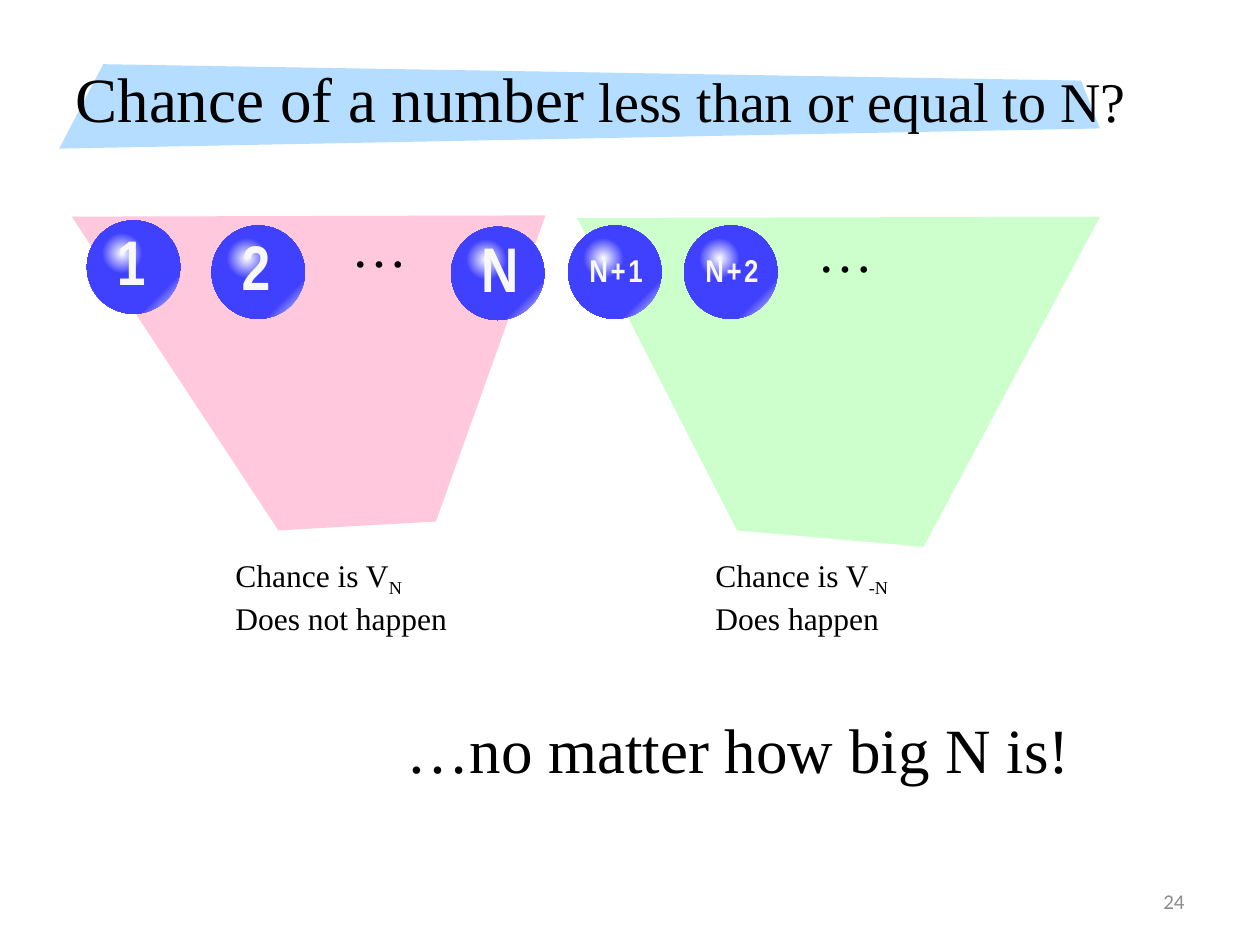
from pptx import Presentation
from pptx.dml.color import RGBColor
from pptx.enum.shapes import MSO_SHAPE
from pptx.enum.text import MSO_ANCHOR, MSO_AUTO_SIZE, PP_ALIGN
from pptx.oxml import parse_xml
from pptx.oxml.ns import nsdecls, qn
from pptx.util import Inches, Pt

SERIF = "Times New Roman"
BALL_BLUE, WHITE = "4040FF", "FFFFFF"
BALL_SIZE, GLINT_SIZE = 0.74, 0.36


def color(hex_string):
    return RGBColor.from_string(hex_string)


def add_run(paragraph, text, size=18, font=SERIF, fill="000000", bold=False,
            spacing=None, baseline=None):
    run = paragraph.add_run()
    run.text = text
    run.font.size, run.font.name, run.font.bold = Pt(size), font, bold
    run.font.color.rgb = color(fill)
    properties = run.font._element
    if spacing is not None:
        properties.set("spc", str(int(spacing * 100)))
    if baseline is not None:
        properties.set("baseline", str(baseline * 1000))


def add_text(shapes, box, lines, wrap=False, anchor=MSO_ANCHOR.TOP,
             align=PP_ALIGN.LEFT, **style):
    """Add a text box; each line is a list of (text, extra format) runs."""
    frame = shapes.add_textbox(*map(Inches, box)).text_frame
    frame.word_wrap, frame.vertical_anchor = wrap, anchor
    frame.auto_size = MSO_AUTO_SIZE.SHAPE_TO_FIT_TEXT
    if isinstance(lines, str):
        lines = [[(lines, {})]]
    for index, runs in enumerate(lines):
        paragraph = frame.add_paragraph() if index else frame.paragraphs[0]
        paragraph.alignment = align
        for text, extra in runs:
            add_run(paragraph, text, **{**style, **extra})


def add_polygon(shapes, left, top, corners, fill):
    points = [(Inches(left + x), Inches(top + y)) for x, y in corners]
    builder = shapes.build_freeform(*points[0], scale=1.0)
    builder.add_line_segments(points[1:], close=True)
    polygon = builder.convert_to_shape()
    polygon.shadow.inherit = False
    polygon.fill.solid()
    polygon.fill.fore_color.rgb = color(fill)
    polygon.line.fill.background()
    return polygon


def add_radial_circle(shapes, left, top, size, stops, focus):
    """Add a circle shaded outward from a focus given as l, t, r, b percent."""
    circle = shapes.add_shape(
        MSO_SHAPE.OVAL, *map(Inches, (left, top, size, size)))
    circle.shadow.inherit = False
    circle.line.fill.background()
    circle.fill.background()
    stop_xml = "".join(
        f'<a:gs pos="{position * 1000}"><a:srgbClr val="{hex_string}"/></a:gs>'
        for position, hex_string in stops)
    edges = " ".join(f'{side}="{value * 1000}"' for side, value in zip("ltrb", focus))
    gradient = parse_xml(
        f'<a:gradFill {nsdecls("a")} rotWithShape="1"><a:gsLst>{stop_xml}</a:gsLst>'
        f'<a:path path="circle"><a:fillToRect {edges}/></a:path></a:gradFill>')
    properties = circle._element.spPr
    properties.replace(properties.find(qn("a:noFill")), gradient)


def add_ball(shapes, left, top, label):
    ball = shapes.add_group_shape().shapes
    add_radial_circle(ball, left, top, BALL_SIZE,
                      [(0, BALL_BLUE), (78, BALL_BLUE), (100, WHITE)],
                      (0, 0, 100, 100))
    add_radial_circle(ball, left + 0.1, top + 0.08, GLINT_SIZE,
                      [(0, WHITE), (64, BALL_BLUE), (100, BALL_BLUE)],
                      (50, 50, 50, 50))
    if len(label) == 1:
        dx, dy, width, height, size = 0.14, -0.03, 0.55, 0.71, 36
    else:
        dx, dy, width, height, size = 0.07, 0.15, 0.77, 0.4, 18
    add_text(shapes, (left + dx, top + dy, width, height), label, wrap=True,
             size=size, font="Arial Narrow", fill="F8F8F8", bold=True, spacing=1.5)


def add_outcome(shapes, left, top, corners, fill, caption_box, subscript, verdict):
    """Add a funnel and, below it, the chance and what happens."""
    outcome = shapes.add_group_shape().shapes
    add_polygon(outcome, left, top, corners, fill)
    dx, dy, width, height = caption_box
    add_text(outcome, (left + dx, top + dy, width, height),
             [[("Chance is V", {}), (subscript, {"baseline": -25})],
              [(verdict, {})]])


def add_title(slide, left, top, width, height):
    band = add_polygon(slide.shapes, left - 0.03, top + 0.21,
                       [(0.35, 0), (8.11, 0.13), (8.26, 0.51), (0, 0.67)], "B4DDFF")
    title = slide.shapes.title
    title._element.addprevious(band._element)
    title.left, title.top, title.width, title.height = map(
        Inches, (left, top, width, height))
    title.text_frame.vertical_anchor = MSO_ANCHOR.MIDDLE
    title.text_frame.auto_size = MSO_AUTO_SIZE.NONE
    paragraph = title.text_frame.paragraphs[0]
    paragraph.alignment = PP_ALIGN.LEFT
    add_run(paragraph, "Chance of a number", size=36)
    add_run(paragraph, " less than or equal to N?", size=32)


def add_number_row(shapes, left, top):
    for dx, dy, label in [(0, 0, "1"), (0.99, 0.04, "2"), (2.89, 0.05, "N"),
                          (3.82, 0.04, "N+1"), (4.74, 0.04, "N+2")]:
        add_ball(shapes, left + dx, top + dy, label)
    for dx, dy in [(2, -0.12), (5.7, -0.08)]:
        add_text(shapes, (left + dx, top + dy, 0.65, 0.64), "…", size=32)


def main():
    deck = Presentation()
    deck.slide_width, deck.slide_height = Inches(10), Inches(7.5)
    slide = deck.slides.add_slide(deck.slide_layouts[5])
    shapes = slide.shapes

    add_title(slide, 0.5, 0.3, 8.62, 0.94)
    add_outcome(shapes, 0.57, 1.71,
                [(0, 0.01), (3.76, 0), (2.89, 2.43), (1.64, 2.5)], "FFC8DC",
                (1.2, 2.65, 1.9, 0.71), "N", "Does not happen")
    add_outcome(shapes, 4.58, 1.72,
                [(0, 0.01), (4.15, 0), (2.75, 2.62), (1.27, 2.49)], "CCFFCC",
                (1, 2.64, 1.61, 0.71), "-N", "Does happen")
    add_number_row(shapes, 0.69, 1.75)
    add_text(shapes, (3.13, 5.59, 5.52, 0.71), "…no matter how big N is!", size=36)
    add_text(shapes, (7.17, 6.95, 2.33, 0.4), "24", wrap=True,
             anchor=MSO_ANCHOR.MIDDLE, align=PP_ALIGN.RIGHT,
             size=12, font="Calibri", fill="8C8C8C")
    deck.save("out.pptx")


if __name__ == "__main__":
    main()
